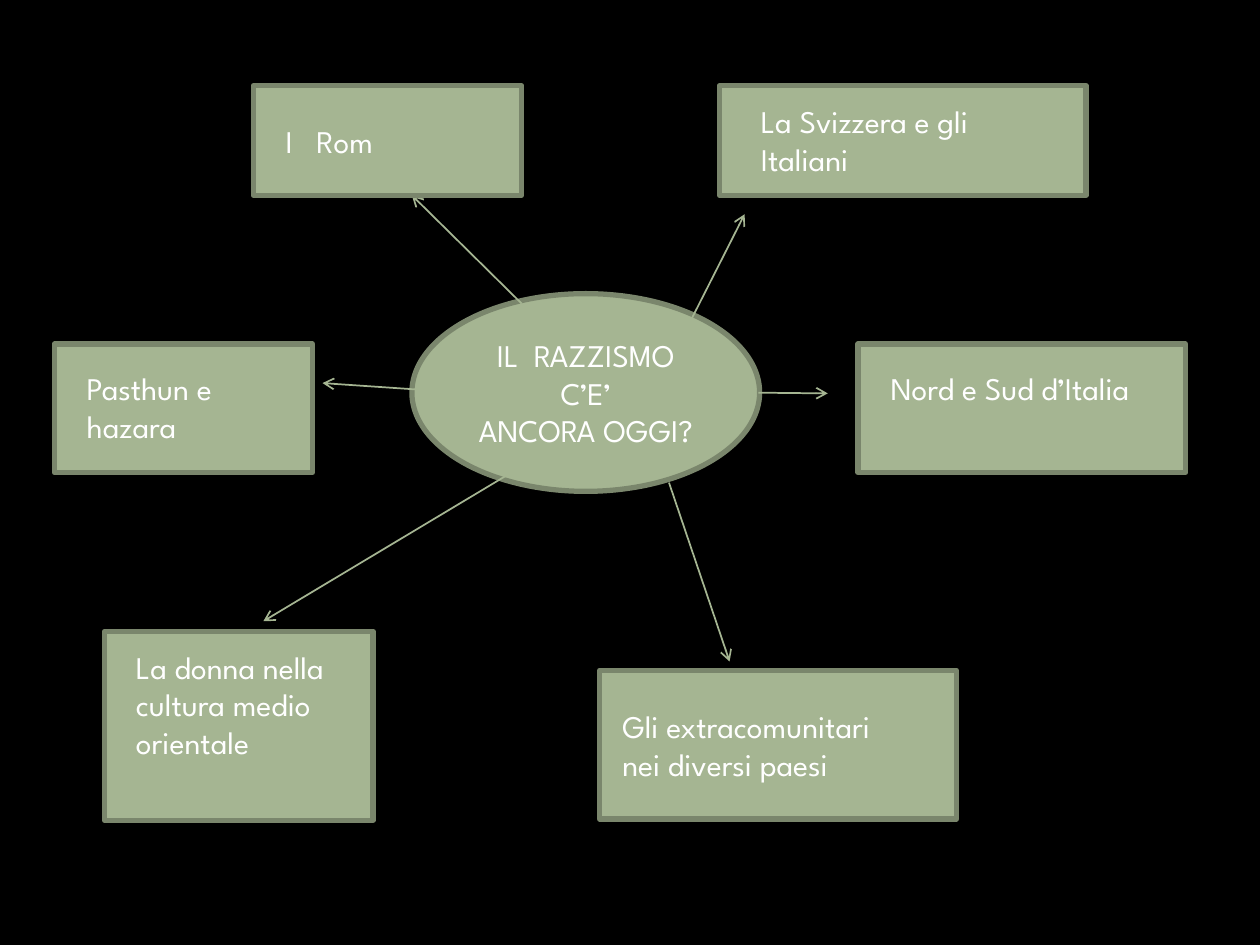
from lxml import etree
from pptx import Presentation
from pptx.dml.color import RGBColor
from pptx.enum import shapes, text
from pptx.oxml import ns
from pptx.util import Pt

FONT = "League Spartan"
COLORS = {"background": "000000", "sage": "A5B592", "border": "7A866C", "text": "FFFFFF"}

CENTER = (235.4, 167.8, 198.7, 113)
QUESTION = ["IL  RAZZISMO", "C’E’", "ANCORA OGGI?"]

# Topic, box (left, top, width, height), text area, arrow (from x, y, to x, y)
TOPICS = [
    ("Pasthun e hazara", (31, 196.6, 147.6, 73.4),
     (42.5, 207.4, 124.6, 51.1), (263.5, 224.3, 184.3, 218.9)),
    ("I   Rom", (144.7, 49, 153.4, 62.6),
     (156.2, 66.2, 130.3, 28.8), (298.1, 173.5, 235.4, 111.6)),
    ("La Svizzera e gli Italiani", (411.1, 49, 209.5, 62.6),
     (427.7, 54.7, 181.4, 51.1), (393.8, 185, 425.5, 122.4)),
    ("Nord e Sud d’Italia", (490.3, 196.6, 187.2, 73.4),
     (501.8, 207.4, 164.2, 51.1), (433.4, 224.4, 473, 224.8)),
    ("Gli extracomunitari nei diversi paesi", (342.7, 383, 203.8, 85),
     (348.5, 400.3, 181.4, 51.1), (382.3, 275.8, 416.9, 378)),
    ("La donna nella cultura medio orientale", (59.8, 360.7, 153.4, 108),
     (70.6, 366.5, 130.3, 94.3), (292.3, 270, 150.5, 355)),
]


def color(name):
    return RGBColor.from_string(COLORS[name])


def points(values):
    return [Pt(v) for v in values]


def add_run(p, words):
    r = p.add_run()
    r.text = words
    r.font.name = FONT
    r.font.size = Pt(18)
    r.font.color.rgb = color("text")


def add_panel(s, kind, area):
    """Add a sage shape with a thick, round-jointed border."""
    sp = s.shapes.add_shape(kind, *points(area))
    sp.shadow.inherit = False
    sp.fill.solid()
    sp.fill.fore_color.rgb = color("sage")
    sp.line.color.rgb = color("border")
    sp.line.width = Pt(3)
    etree.SubElement(sp.line._get_or_add_ln(), ns.qn("a:round"))
    return sp


def add_question(s):
    tf = add_panel(s, shapes.MSO_SHAPE.OVAL, CENTER).text_frame
    tf.word_wrap = True
    tf.vertical_anchor = text.MSO_ANCHOR.MIDDLE
    for i, words in enumerate(QUESTION):
        p = tf.add_paragraph() if i else tf.paragraphs[0]
        p.alignment = text.PP_ALIGN.CENTER
        add_run(p, words)


def add_label(s, words, area):
    tf = s.shapes.add_textbox(*points(area)).text_frame
    tf.word_wrap = True
    tf.auto_size = text.MSO_AUTO_SIZE.SHAPE_TO_FIT_TEXT
    add_run(tf.paragraphs[0], words)


def add_arrow(s, ends):
    line = s.shapes.add_connector(shapes.MSO_CONNECTOR.STRAIGHT, *points(ends))
    line.line.color.rgb = color("sage")
    line.line.width = Pt(1)
    etree.SubElement(line.line._get_or_add_ln(), ns.qn("a:tailEnd"), type="arrow")
    etree.SubElement(line._element.spPr, ns.qn("a:effectLst"))


def main():
    prs = Presentation()
    prs.slide_width, prs.slide_height = Pt(720), Pt(540)
    s = prs.slides.add_slide(prs.slide_layouts[6])
    s.background.fill.solid()
    s.background.fill.fore_color.rgb = color("background")

    add_question(s)
    for words, box, label, arrow in TOPICS:
        add_arrow(s, arrow)
        add_panel(s, shapes.MSO_SHAPE.RECTANGLE, box)
        add_label(s, words, label)
    prs.save("out.pptx")


if __name__ == "__main__":
    main()
